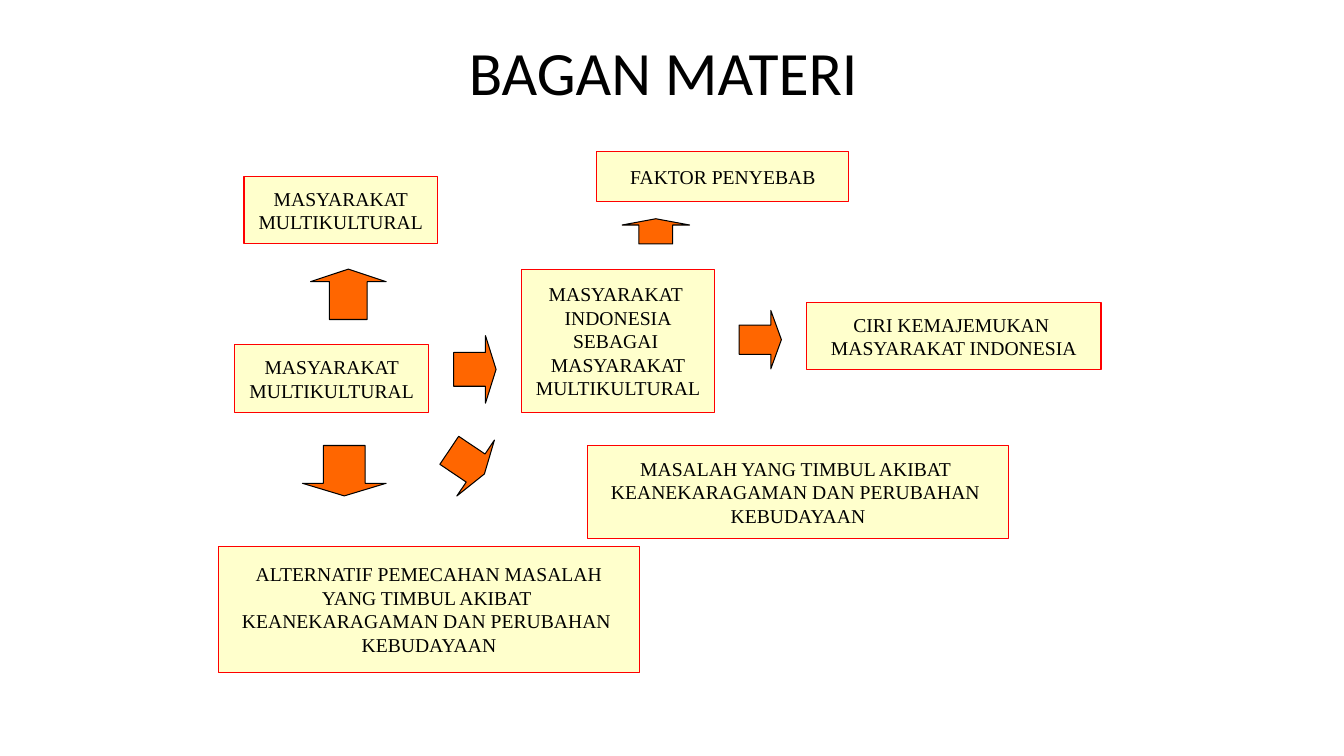
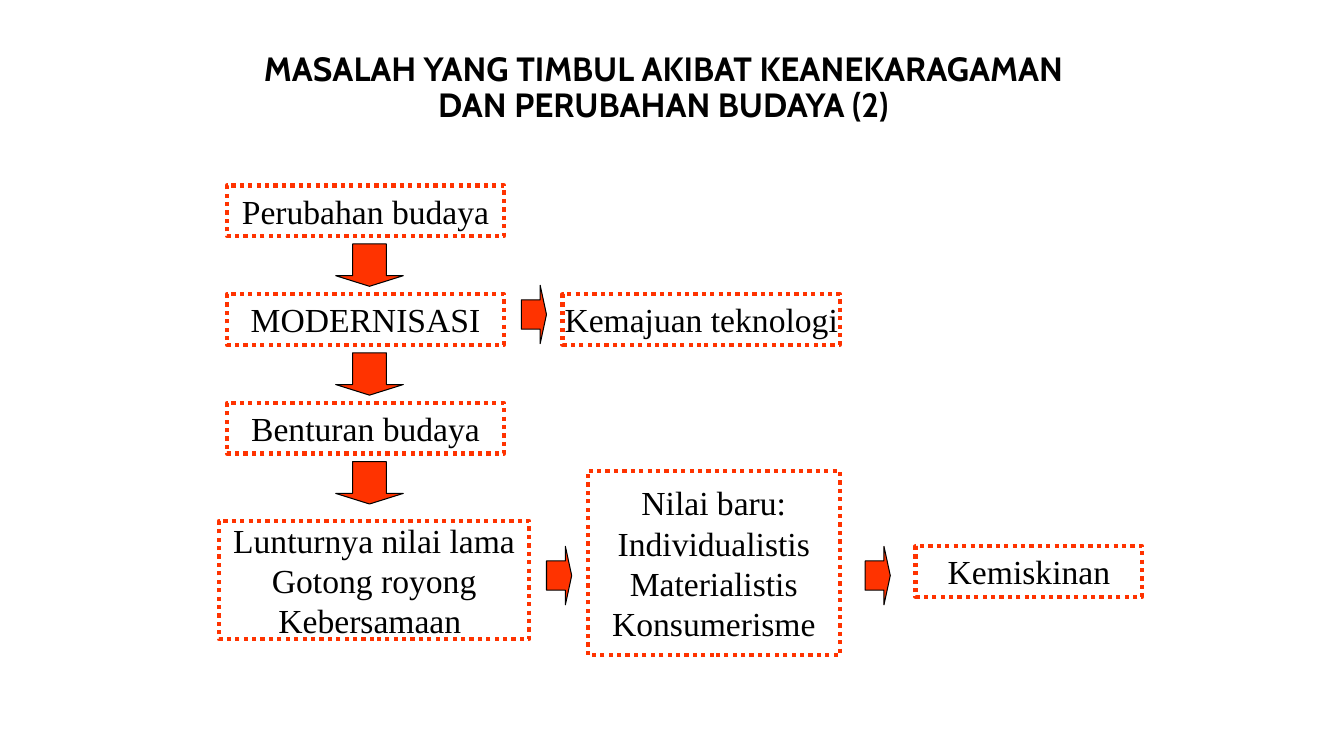
from pptx import Presentation
from pptx.dml.color import RGBColor
from pptx.enum import dml, shapes, text
from pptx.util import Inches, Pt

THEME = {
    "black": RGBColor.from_string("000000"),
    "white": RGBColor.from_string("FFFFFF"),
    "cream": RGBColor.from_string("FFFFCC"),
    "red": RGBColor.from_string("FF0000"),
    "orange": RGBColor.from_string("FF6600"),
    "vermilion": RGBColor.from_string("FF3300"),
    "body_font": "Times New Roman",
    "thin": Pt(0.75),
    "thick": Pt(3),
}
TOPIC = {"fill": "cream", "line": "red", "width": "thin", "dash": None, "size": 14}
STEP = {"fill": "white", "line": "vermilion", "width": "thick",
        "dash": dml.MSO_LINE.ROUND_DOT, "size": 24}
RIGHT = shapes.MSO_SHAPE.RIGHT_ARROW
DOWN = shapes.MSO_SHAPE.DOWN_ARROW
UP = shapes.MSO_SHAPE.UP_ARROW


def add_block(page, kind, place, fill, line, width, dash=None):
    """Add a filled, outlined shape at (left, top, width, height) inches."""
    block = page.shapes.add_shape(kind, *map(Inches, place))
    block.shadow.inherit = False
    block.fill.solid()
    block.fill.fore_color.rgb = THEME[fill]
    block.line.color.rgb = THEME[line]
    block.line.width = THEME[width]
    if dash:
        block.line.dash_style = dash
    return block


def write(box, words, size, font, wrap, bold=False, spacing=None):
    """Write centred text, one paragraph for each line of words."""
    frame = box.text_frame
    frame.text = words
    frame.word_wrap = wrap
    frame.vertical_anchor = text.MSO_ANCHOR.MIDDLE
    look = {"size": Pt(size), "name": font, "bold": bold}
    for para in frame.paragraphs:
        para.alignment = text.PP_ALIGN.CENTER
        para.line_spacing = spacing
        para.font.color.rgb = THEME["black"]
        for name, value in look.items():
            setattr(para.font, name, value)


deck = Presentation()
deck.slide_width, deck.slide_height = Inches(13.33), Inches(7.5)

# Content of the topic chart
topics = [
    ((2.33, 3.42, 1.92, 0.67), "MASYARAKAT\nMULTIKULTURAL"),
    ((2.42, 1.75, 1.92, 0.67), "MASYARAKAT\nMULTIKULTURAL"),
    ((5.17, 2.67, 1.92, 1.42),
     "MASYARAKAT \nINDONESIA\nSEBAGAI \nMASYARAKAT\nMULTIKULTURAL"),
    ((5.83, 4.42, 4.17, 0.92),
     "MASALAH YANG TIMBUL AKIBAT \nKEANEKARAGAMAN DAN PERUBAHAN \nKEBUDAYAAN"),
    ((2.17, 5.42, 4.17, 1.25),
     "ALTERNATIF PEMECAHAN MASALAH\nYANG TIMBUL AKIBAT \n"
     "KEANEKARAGAMAN DAN PERUBAHAN \nKEBUDAYAAN"),
    ((5.92, 1.5, 2.5, 0.5), "FAKTOR PENYEBAB"),
    ((8, 3, 2.92, 0.67), "CIRI KEMAJEMUKAN \nMASYARAKAT INDONESIA"),
]
topic_arrows = [
    (RIGHT, (4.5, 3.33, 0.42, 0.67), 0),
    (RIGHT, (4.42, 4.25, 0.42, 0.67), 33.9),
    (DOWN, (3, 4.42, 0.83, 0.5), 0),
    (UP, (3.08, 2.67, 0.75, 0.5), 0),
    (RIGHT, (7.33, 3.08, 0.42, 0.58), 0),
    (UP, (6.17, 2.17, 0.67, 0.25), 0),
]

# Content of the culture change chart: an even column, then its branches
row_pitch = 1.08
column = ["Perubahan budaya", "MODERNISASI", "Benturan budaya"]
steps = [((2.25, 1.84 + row * row_pitch, 2.75, 0.5), words)
         for row, words in enumerate(column)]
steps += [
    ((5.58, 2.92, 2.75, 0.5), "Kemajuan teknologi"),
    ((2.17, 5.17, 3.08, 1.17), "Lunturnya nilai lama\nGotong royong\nKebersamaan "),
    ((5.83, 4.67, 2.5, 1.83),
     "Nilai baru:\nIndividualistis\nMaterialistis\nKonsumerisme"),
    ((9.08, 5.42, 2.25, 0.5), "Kemiskinan"),
]
step_arrows = [(DOWN, (3.33, 2.42 + row * row_pitch, 0.67, 0.42), 0)
               for row in range(len(column))]
step_arrows += [(RIGHT, (left, top, 0.25, 0.58), 0)
                for left, top in [(5.42, 5.42), (5.17, 2.83), (8.58, 5.42)]]

pages = [
    {"title": "BAGAN MATERI", "place": (2.33, 0.33, 8.5, 0.83),
     "title_look": {"size": 44, "font": "Calibri"},
     "boxes": topics, "style": TOPIC, "arrows": topic_arrows, "arrow_fill": "orange"},
    {"title": "MASALAH YANG TIMBUL AKIBAT KEANEKARAGAMAN DAN PERUBAHAN BUDAYA (2)",
     "place": (2.33, 0.42, 8.5, 0.92),
     "title_look": {"size": 24, "font": "Cabin", "bold": True},
     "boxes": steps, "style": STEP, "arrows": step_arrows, "arrow_fill": "vermilion"},
]

for chart in pages:
    page = deck.slides.add_slide(deck.slide_layouts[6])

    # Title
    title = page.shapes.add_textbox(*map(Inches, chart["place"]))
    write(title, chart["title"], wrap=True, spacing=0.9, **chart["title_look"])

    # Boxes
    style = chart["style"]
    for place, words in chart["boxes"]:
        box = add_block(page, shapes.MSO_SHAPE.RECTANGLE, place, style["fill"],
                        style["line"], style["width"], style["dash"])
        write(box, words, style["size"], THEME["body_font"], wrap=False)

    # Arrows
    for kind, place, turn in chart["arrows"]:
        arrow = add_block(page, kind, place, chart["arrow_fill"], "black", "thin")
        arrow.adjustments[0] = 0.5
        arrow.adjustments[1] = 0.25
        arrow.rotation = turn

deck.save("out.pptx")
